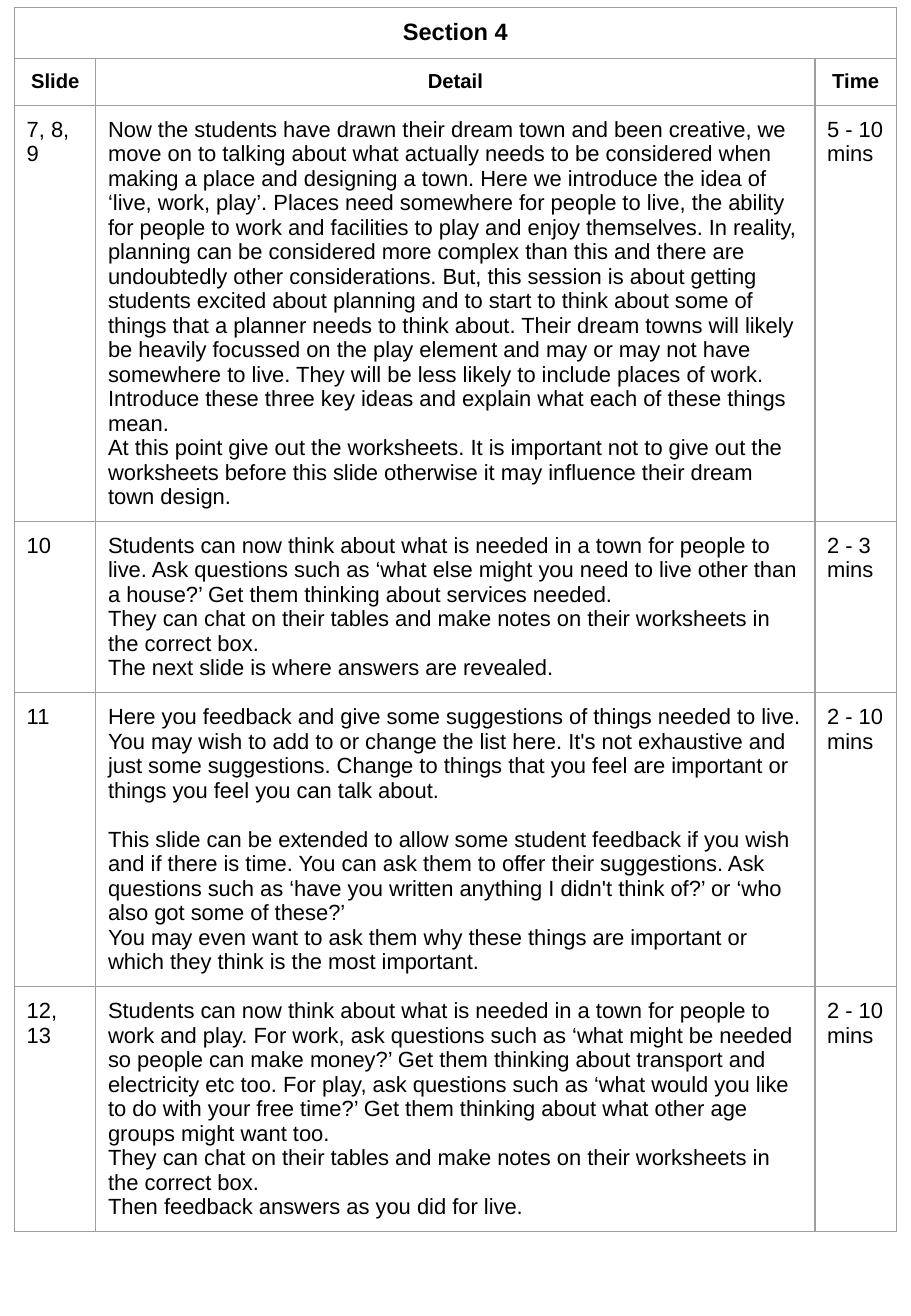
from lxml.etree import SubElement
from pptx import Presentation
from pptx.dml.color import RGBColor
from pptx.enum.text import PP_ALIGN as Align
from pptx.oxml.ns import qn
from pptx.util import Inches, Pt

FONT = "Arial"
COLOURS = {"text": "000000", "rule": "9E9E9E"}
COLUMN_WIDTHS = (0.67, 5.92, 0.67)
ROW_HEIGHTS = (0.37, 0.37, 3.16, 1.29, 2.23, 1.85)
TABLE_LEFT, TABLE_TOP = 0.12, 0.06
PADDING = Inches(0.1)
RULE_WIDTH = Pt(0.75)
SECTION_SIZE, HEADING_SIZE, BODY_SIZE = 14, 12, 13
BLANK_LINE = Pt(14.5)

SECTION = "Section 4"
HEADINGS = ("Slide", "Detail", "Time")
WORKSHEET_NOTES = (
    "They can chat on their tables and make notes on their worksheets "
    "in the correct box."
)
EXTENSION = (
    "This slide can be extended to allow some student feedback if you wish and "
    "if there is time. You can ask them to offer their suggestions. Ask questions "
    "such as ‘have you written anything I didn't think of?’ or ‘who also got some "
    "of these?’"
)

# Slide numbers, detail paragraphs, time
LESSON_STEPS = (
    ("7, 8, 9", (
        "Now the students have drawn their dream town and been creative, we move on "
        "to talking about what actually needs to be considered when making a place "
        "and designing a town. Here we introduce the idea of ‘live, work, play’. "
        "Places need somewhere for people to live, the ability for people to work "
        "and facilities to play and enjoy themselves. In reality, planning can be "
        "considered more complex than this and there are undoubtedly other "
        "considerations. But, this session is about getting students excited about "
        "planning and to start to think about some of things that a planner needs to "
        "think about. Their dream towns will likely be heavily focussed on the play "
        "element and may or may not have somewhere to live. They will be less likely "
        "to include places of work.",
        "Introduce these three key ideas and explain what each of these things mean.",
        "At this point give out the worksheets. It is important not to give out the "
        "worksheets before this slide otherwise it may influence their dream town "
        "design.",
    ), "5 - 10 mins"),
    ("10", (
        "Students can now think about what is needed in a town for people to live. "
        "Ask questions such as ‘what else might you need to live other than a house?’ "
        "Get them thinking about services needed.",
        WORKSHEET_NOTES,
        "The next slide is where answers are revealed.",
    ), "2 - 3 mins"),
    ("11", (
        "Here you feedback and give some suggestions of things needed to live. You "
        "may wish to add to or change the list here. It's not exhaustive and just "
        "some suggestions. Change to things that you feel are important or things "
        "you feel you can talk about.",
        EXTENSION,
        "You may even want to ask them why these things are important or which they "
        "think is the most important.",
    ), "2 - 10 mins"),
    ("12, 13", (
        "Students can now think about what is needed in a town for people to work "
        "and play. For work, ask questions such as ‘what might be needed so people "
        "can make money?’ Get them thinking about transport and electricity etc too. "
        "For play, ask questions such as ‘what would you like to do with your free "
        "time?’ Get them thinking about what other age groups might want too.",
        WORKSHEET_NOTES,
        "Then feedback answers as you did for live.",
    ), "2 - 10 mins"),
)


def rule_cell(cell):
    """Draw a thin rule on all four sides and leave the cell unfilled."""
    properties = cell._tc.get_or_add_tcPr()
    for side in ("a:lnL", "a:lnR", "a:lnT", "a:lnB"):
        rule = SubElement(properties, qn(side), w=str(int(RULE_WIDTH)))
        fill = SubElement(rule, qn("a:solidFill"))
        SubElement(fill, qn("a:srgbClr"), val=COLOURS["rule"])
    cell.fill.background()
    cell.margin_left = cell.margin_right = PADDING
    cell.margin_top = cell.margin_bottom = PADDING


def write_cell(cell, paragraphs, size, heading=False):
    cell.text_frame.text = "\n".join(paragraphs)
    for paragraph in cell.text_frame.paragraphs:
        paragraph.alignment = Align.CENTER if heading else Align.LEFT
        if paragraph.text == EXTENSION:
            paragraph.space_before = BLANK_LINE
        for run in paragraph.runs:
            run.font.name = FONT
            run.font.size = Pt(size)
            run.font.bold = heading
            run.font.color.rgb = RGBColor.from_string(COLOURS["text"])


def add_lesson_table(slide):
    lesson = slide.shapes.add_table(
        len(ROW_HEIGHTS), len(COLUMN_WIDTHS),
        Inches(TABLE_LEFT), Inches(TABLE_TOP),
        Inches(sum(COLUMN_WIDTHS)), Inches(sum(ROW_HEIGHTS)),
    ).table
    lesson.first_row = lesson.horz_banding = False
    for column, width in zip(lesson.columns, COLUMN_WIDTHS):
        column.width = Inches(width)
    for row, height in zip(lesson.rows, ROW_HEIGHTS):
        row.height = Inches(height)
    for cell in lesson.iter_cells():
        rule_cell(cell)

    # Section and column headings
    lesson.cell(0, 0).merge(lesson.cell(0, len(HEADINGS) - 1))
    write_cell(lesson.cell(0, 0), [SECTION], SECTION_SIZE, heading=True)
    for column, heading in enumerate(HEADINGS):
        write_cell(lesson.cell(1, column), [heading], HEADING_SIZE, heading=True)

    # Lesson steps
    for row, (numbers, details, time) in enumerate(LESSON_STEPS, start=2):
        for column, paragraphs in enumerate(([numbers], details, [time])):
            write_cell(lesson.cell(row, column), paragraphs, BODY_SIZE)


def main():
    deck = Presentation()
    deck.slide_width, deck.slide_height = Inches(7.5), Inches(10.83)
    blank_layout = deck.slide_layouts[6]
    add_lesson_table(deck.slides.add_slide(blank_layout))
    deck.save("out.pptx")


if __name__ == "__main__":
    main()
